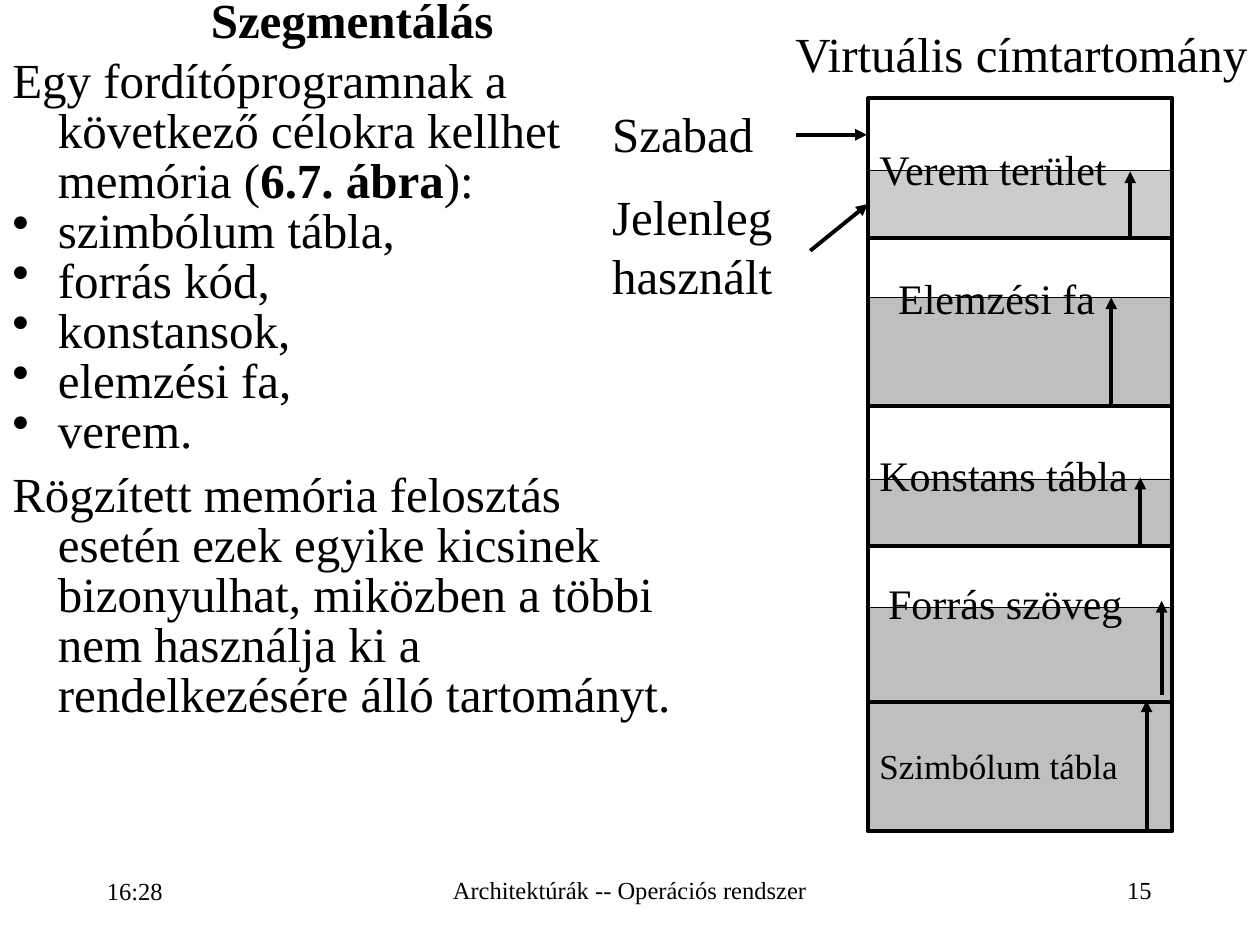
import typing

import pptx
import pptx.dml.color
import pptx.enum.shapes
import pptx.enum.text
import pptx.oxml
import pptx.oxml.ns
import pptx.util
from lxml import etree

Pt = pptx.util.Pt
ALIGN = pptx.enum.text.PP_ALIGN
ANCHOR = pptx.enum.text.MSO_ANCHOR
FONT = "Times New Roman"
COLORS = {"ink": "000000", "pale": "CCCCCC", "gray": "BFBFBF"}
LEFT, WIDTH = 496, 174
TOP, BASE = 56, 475
HANG = 26


class Label(typing.NamedTuple):
    text: str
    x: float
    y: float
    w: float
    h: float
    size: float = 24
    align: typing.Any = ALIGN.LEFT
    anchor: typing.Any = ANCHOR.TOP
    lead: float = 1


class Band(typing.NamedTuple):
    y: float
    h: float
    color: str = "gray"


class Line(typing.NamedTuple):
    x1: float
    y1: float
    x2: float
    y2: float
    arrow: bool = True


BANDS = [Band(97.2, 38.2, "pale"), Band(170, 61), Band(273.6, 38.2), Band(347, 128)]

LABELS = [
    Label("Verem terület", 495.4, 78.5, 148, 37),
    Label("Elemzési fa", 506.2, 152, 136, 37),
    Label("Konstans tábla", 495.4, 253.4, 168, 37),
    Label("Forrás szöveg", 500.4, 326.2, 168, 37),
    Label("Szimbólum tábla", 495.4, 422, 176, 32, 20),
    Label("Virtuális címtartomány", 326, 10, 394, 41, 28, ALIGN.RIGHT),
    Label("Szabad\nJelenleg használt", 342.7, 55.4, 153.4, 125, 28),
    Label("16:28", 54, 490.3, 149, 39, 14, ALIGN.LEFT, ANCHOR.MIDDLE, 0.93),
    Label("Architektúrák -- Operációs rendszer", 246.2, 491.8, 227.5, 35.3, 14,
          ALIGN.CENTER, ANCHOR.MIDDLE, 0.93),
    Label("15", 516.2, 491.8, 149, 35.3, 14, ALIGN.RIGHT, ANCHOR.MIDDLE, 0.93),
]

RULES = [Line(LEFT, y, LEFT + WIDTH, y, False) for y in (136, 231.8, 311.8, 401)]
ARROWS = [
    Line(655.2, BASE, 655.2, 400.3),
    Line(663.8, 397.4, 663.8, 343.4),
    Line(651.6, 311.8, 651.6, 272.9),
    Line(635, 231.1, 635, 170),
    Line(645.8, 135.4, 645.8, 98),
    Line(455, 77, 495.4, 77),
    Line(463, 143.3, 496, 116.6),
]

BODY = [
    "Egy fordítóprogramnak a következő célokra kellhet memória (|6.7. ábra|):",
    "szimbólum tábla,",
    "forrás kód,",
    "konstansok,",
    "elemzési fa,",
    "verem.",
    "Rögzített memória felosztás esetén ezek egyike kicsinek bizonyulhat, "
    "miközben a többi nem használja ki a rendelkezésére álló tartományt.",
]


def shade(name: str) -> pptx.dml.color.RGBColor:
    return pptx.dml.color.RGBColor.from_string(COLORS[name])


def style(run, size: float, bold: bool = False) -> None:
    run.font.name = FONT
    run.font.size = Pt(size)
    run.font.bold = bold
    run.font.color.rgb = shade("ink")


def setup(frame, anchor=ANCHOR.TOP) -> None:
    """Wrap the text and use the common insets."""
    frame.word_wrap = True
    frame.auto_size = pptx.enum.text.MSO_AUTO_SIZE.NONE
    frame.vertical_anchor = anchor
    frame.margin_left = frame.margin_right = Pt(7.2)
    frame.margin_top = frame.margin_bottom = Pt(3.6)


def write(shapes, item: Label) -> None:
    box = shapes.add_textbox(Pt(item.x), Pt(item.y), Pt(item.w), Pt(item.h))
    frame = box.text_frame
    setup(frame, item.anchor)
    frame.text = item.text
    for i, para in enumerate(frame.paragraphs):
        para.alignment = item.align
        para.line_spacing = item.lead
        para.space_before = Pt(item.size / 2 if i else 0)
        style(para.runs[0], item.size)


def block(shapes, y: float, h: float, color: str | None, weight: float) -> None:
    kind = pptx.enum.shapes.MSO_SHAPE.RECTANGLE
    rect = shapes.add_shape(kind, Pt(LEFT), Pt(y), Pt(WIDTH), Pt(h))
    rect.shadow.inherit = False
    if color:
        rect.fill.solid()
        rect.fill.fore_color.rgb = shade(color)
    else:
        rect.fill.background()
    rect.line.color.rgb = shade("ink")
    rect.line.width = Pt(weight)


def draw(shapes, item: Line) -> None:
    kind = pptx.enum.shapes.MSO_CONNECTOR.STRAIGHT
    ends = [Pt(v) for v in item[:4]]
    line = shapes.add_connector(kind, *ends)
    line.line.color.rgb = shade("ink")
    line.line.width = Pt(2.25)
    qn = pptx.oxml.ns.qn
    if item.arrow:
        etree.SubElement(line.line._get_or_add_ln(), qn("a:tailEnd"), type="triangle")
    etree.SubElement(line._element.spPr, qn("a:effectLst"))


def head(title) -> None:
    title.left, title.top, title.width, title.height = 0, 0, Pt(402.5), Pt(30)
    frame = title.text_frame
    setup(frame)
    frame.text = "Szegmentálás"
    para = frame.paragraphs[0]
    para.alignment = ALIGN.CENTER
    para.line_spacing = 0.69
    style(para.runs[0], 28, True)


def fill(shapes) -> None:
    """Write the body with hanging indents and a bulleted list."""
    frame = shapes.add_textbox(0, Pt(30), Pt(402.5), Pt(470)).text_frame
    setup(frame)
    frame.text = "\n".join(text.replace("|", "") for text in BODY)
    last = len(BODY) - 1
    for i, (para, text) in enumerate(zip(frame.paragraphs, BODY)):
        para.line_spacing = 0.85
        para.space_before = Pt(8 if i == last else 0)
        props = para._p.get_or_add_pPr()
        props.set("marL", str(Pt(HANG)))
        props.set("indent", str(Pt(-HANG)))
        if 0 < i < last:
            etree.SubElement(props, pptx.oxml.ns.qn("a:buChar"), char="•")
        parts = text.split("|")
        para.runs[0].text = parts[0]
        for part in parts[1:]:
            para.add_run().text = part
        for j, run in enumerate(para.runs):
            style(run, 28, j == 1)


def main() -> None:
    deck = pptx.Presentation()
    deck.slide_width, deck.slide_height = Pt(720), Pt(540)
    shapes = deck.slides.add_slide(deck.slide_layouts[5]).shapes
    head(shapes.title)
    fill(shapes)
    for band in BANDS:
        block(shapes, band.y, band.h, band.color, 0.25)
    block(shapes, TOP, BASE - TOP, None, 2.25)
    for label in LABELS:
        write(shapes, label)
    for line in RULES + ARROWS:
        draw(shapes, line)
    deck.save("out.pptx")


if __name__ == "__main__":
    main()
